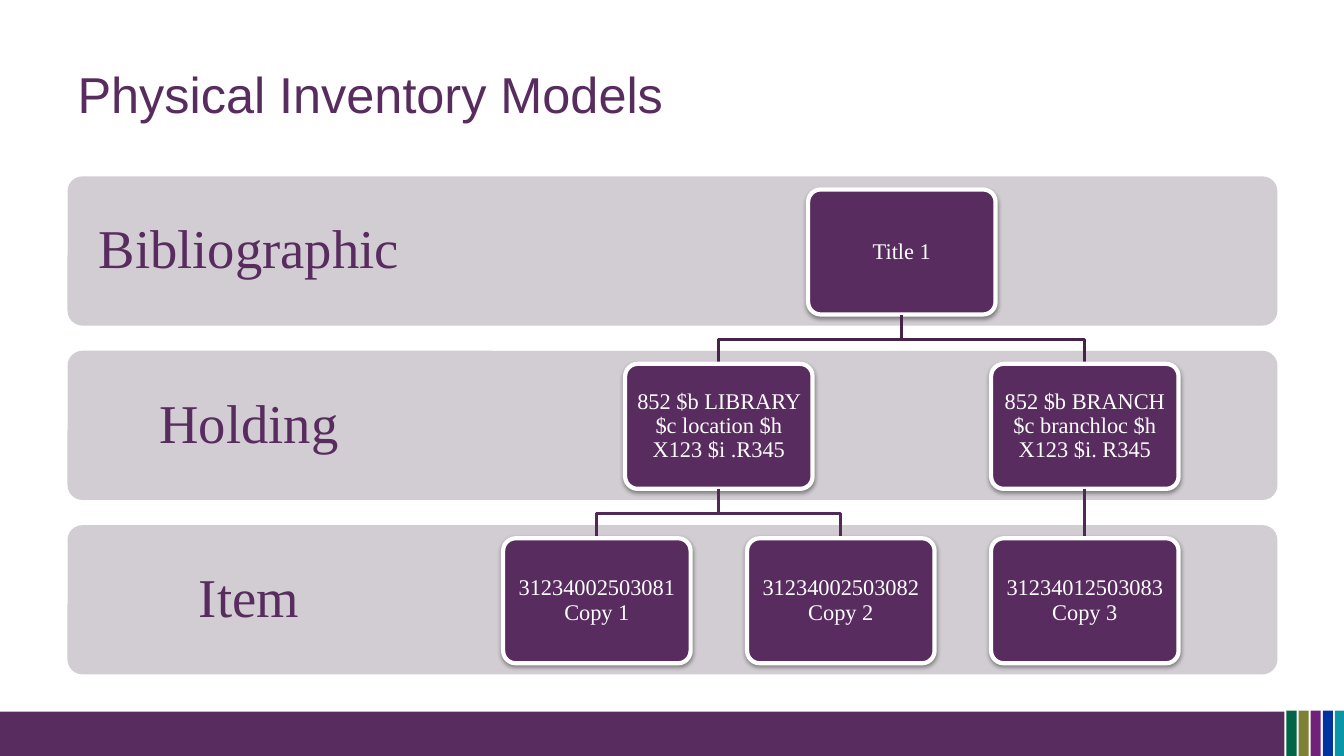
from lxml import etree
from pptx import Presentation
from pptx.dml import color
from pptx.enum import shapes, text
from pptx.oxml import ns
from pptx.util import Inches, Pt

PURPLE, GREY, WHITE = "592C5F", "D1CDD2", "FFFFFF"
LINK_COLOURS = ["47234C", "512856"]
STRIPES = ["006647", "7E8034", "712177", "0033A0", "0996A9"]
LEVELS = ["Bibliographic", "Holding", "Item"]

BAND_LEFT, BAND_TOP, BAND_WIDTH, BAND_HEIGHT = 0.67, 1.75, 12, 1.48
LEVEL_STEP, LABEL_WIDTH = 1.73, 3.6
NODE_LEFT, NODE_WIDTH, NODE_HEIGHT = 4.99, 1.86, 1.24
COLUMN_STEP, NODE_OFFSET = 1.21, 0.13

# Each node is (column, text, children).
TREE = (2.5, "Title 1", [
    (1, "852 $b LIBRARY $c location $h X123 $i .R345", [
        (0, "31234002503081 Copy 1", []),
        (2, "31234002503082 Copy 2", []),
    ]),
    (4, "852 $b BRANCH $c branchloc $h X123 $i. R345", [
        (4, "31234012503083 Copy 3", []),
    ]),
])


def rgb(hex_colour):
    return color.RGBColor.from_string(hex_colour)


class InventorySlide:
    """Holds the style and the current slide."""

    heading_font, body_font = "Arial", "Times New Roman"

    def __init__(self, presentation):
        self.slide = presentation.slides.add_slide(presentation.slide_layouts[5])

    def add_wording(self, frame, wording, size, colour, font, align, margins=None):
        frame.word_wrap = True
        frame.auto_size = text.MSO_AUTO_SIZE.NONE
        frame.vertical_anchor = text.MSO_ANCHOR.MIDDLE
        if margins:
            frame.margin_left, frame.margin_right = map(Inches, margins)
        paragraph = frame.paragraphs[0]
        paragraph.alignment = align
        run = paragraph.add_run()
        run.text = wording
        run.font.size, run.font.name = Pt(size), font
        run.font.color.rgb = rgb(colour)
        return paragraph

    def title(self, wording):
        heading = self.slide.shapes.title
        heading.left, heading.top = Inches(0.67), Inches(0.3)
        heading.width, heading.height = Inches(12), Inches(1.25)
        self.add_wording(heading.text_frame, wording, 36, PURPLE, self.heading_font,
                         text.PP_ALIGN.LEFT)

    def block(self, left, top, width, height, fill, rounded=False):
        kind = shapes.MSO_SHAPE.ROUNDED_RECTANGLE if rounded else shapes.MSO_SHAPE.RECTANGLE
        block = self.slide.shapes.add_shape(
            kind, Inches(left), Inches(top), Inches(width), Inches(height))
        if rounded:
            block.adjustments[0] = 0.1
        block.shadow.inherit = False
        block.fill.solid()
        block.fill.fore_color.rgb = rgb(fill)
        block.line.fill.background()
        return block

    def band(self, level, label):
        band = self.block(BAND_LEFT, BAND_TOP + level * LEVEL_STEP,
                          BAND_WIDTH, BAND_HEIGHT, GREY, rounded=True)
        margins = 0.2, BAND_WIDTH - LABEL_WIDTH + 0.2
        self.add_wording(band.text_frame, label, 39, PURPLE, self.body_font,
                         text.PP_ALIGN.CENTER, margins).line_spacing = 0.9

    def node(self, level, column, wording):
        node = self.block(NODE_LEFT + column * COLUMN_STEP,
                          BAND_TOP + NODE_OFFSET + level * LEVEL_STEP,
                          NODE_WIDTH, NODE_HEIGHT, PURPLE, rounded=True)
        node.line.color.rgb, node.line.width = rgb(WHITE), Pt(3)
        self.drop_shadow(node)
        self.add_wording(node.text_frame, wording, 16, WHITE, self.body_font,
                         text.PP_ALIGN.CENTER, (0.06, 0.06)).line_spacing = 0.9
        return node

    def drop_shadow(self, node):
        effects = node._element.spPr.find(ns.qn("a:effectLst"))
        shadow = etree.SubElement(effects, ns.qn("a:outerShdw"), blurRad="40000",
                                  dist="20000", dir="5400000", rotWithShape="0")
        black = etree.SubElement(shadow, ns.qn("a:srgbClr"), val="000000")
        etree.SubElement(black, ns.qn("a:alpha"), val="38000")

    def link_line(self, link, level):
        link.line.color.rgb, link.line.width = rgb(LINK_COLOURS[level]), Pt(2)

    def straight_link(self, parent, level):
        """Start a vertical line below parent; its end is joined later."""
        x, y = parent.left + parent.width // 2, parent.top + parent.height
        link = self.slide.shapes.add_connector(
            shapes.MSO_CONNECTOR.STRAIGHT, x, y, x, y)
        link.begin_connect(parent, 2)
        self.link_line(link, level)
        etree.SubElement(link._element.spPr, ns.qn("a:effectLst"))
        return link

    def elbow_link(self, parent, level, column_shift):
        x, y = parent.left + parent.width // 2, parent.top + parent.height
        child_x = x + Inches(column_shift * COLUMN_STEP)
        drop = Inches(LEVEL_STEP - NODE_HEIGHT)
        middle = y + drop // 2
        outline = self.slide.shapes.build_freeform(x, y)
        outline.add_line_segments(
            [(x, middle), (child_x, middle), (child_x, y + drop)], close=False)
        link = outline.convert_to_shape()
        link.shadow.inherit = False
        link.fill.background()
        self.link_line(link, level)

    def tree(self, branch, level=0):
        """Draw a node and its descendants, each link beneath its child."""
        column, wording, children = branch
        parent = self.node(level, column, wording)
        for child in children:
            shift = child[0] - column
            if shift:
                self.elbow_link(parent, level, shift)
                self.tree(child, level + 1)
            else:
                link = self.straight_link(parent, level)
                link.end_connect(self.tree(child, level + 1), 0)
        return parent

    def footer(self):
        self.block(0, 7.06, 12.74, 0.45, PURPLE)
        for position, colour in enumerate(STRIPES):
            self.block(12.76 + position * 0.12, 7.05, 0.1, 0.45, colour)


def main():
    presentation = Presentation()
    presentation.slide_width, presentation.slide_height = Inches(13.33), Inches(7.5)
    inventory = InventorySlide(presentation)
    inventory.footer()
    inventory.title("Physical Inventory Models")
    for level, label in enumerate(LEVELS):
        inventory.band(level, label)
    inventory.tree(TREE)
    presentation.save("out.pptx")


if __name__ == "__main__":
    main()
